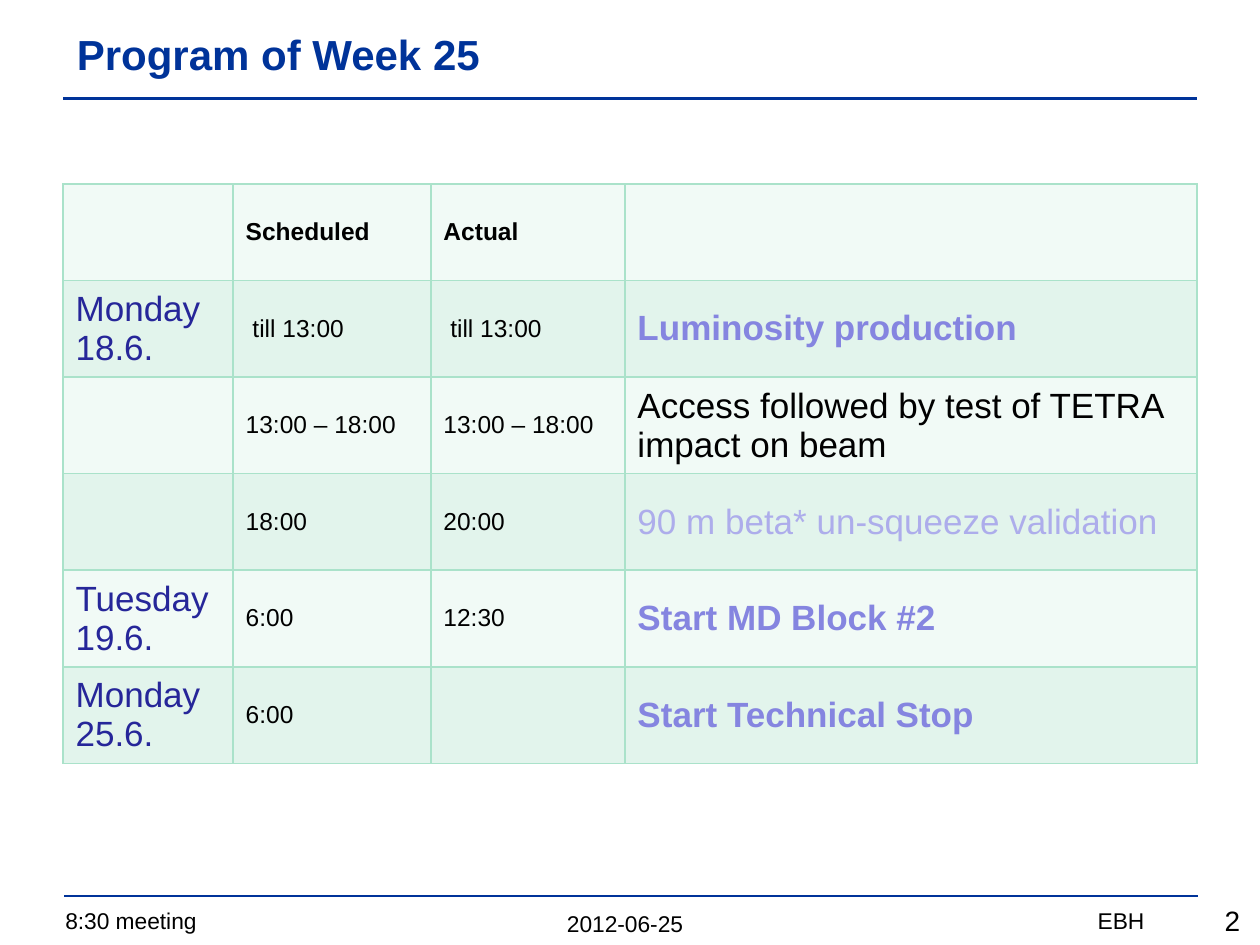
"""Builds the weekly program slide: title, schedule table and footer."""
from typing import NamedTuple

from lxml.etree import SubElement
from pptx import Presentation
from pptx.dml.color import RGBColor
from pptx.enum.shapes import MSO_CONNECTOR
from pptx.enum.text import MSO_ANCHOR, PP_ALIGN
from pptx.oxml.ns import qn
from pptx.util import Inches, Pt

BLACK = RGBColor(0x00, 0x00, 0x00)
NAVY = RGBColor(0x00, 0x33, 0x99)
INDIGO = RGBColor(0x26, 0x26, 0x99)
VIOLET = RGBColor(0x85, 0x85, 0xE0)
LILAC = RGBColor(0xAD, 0xAD, 0xEB)
MINT = RGBColor(0xAA, 0xE2, 0xCA)
BANDS = RGBColor(0xF1, 0xFA, 0xF6), RGBColor(0xE2, 0xF4, 0xEC)

UNIT = Inches(0.1)
COLS, ROWS = 100, 75
MARGIN = 5
TABLE_TOP, ROW_HEIGHT = 14.6, 7.65
COL_WIDTHS = 13.5, 15.7, 15.4, 45.4


class Entry(NamedTuple):
    day: str
    scheduled: str
    actual: str
    activity: str = ""
    color: RGBColor = BLACK
    bold: bool = False


class Footer(NamedTuple):
    text: str
    box: tuple
    align: PP_ALIGN
    size: int = 13


ENTRIES = [
    Entry("", "Scheduled", "Actual"),
    Entry("Monday 18.6.", " till 13:00", " till 13:00", "Luminosity production", VIOLET, True),
    Entry("", "13:00 – 18:00", "13:00 – 18:00", "Access followed by test of TETRA impact on beam"),
    Entry("", "18:00", "20:00", "90 m beta* un-squeeze validation", LILAC),
    Entry("Tuesday 19.6.", "6:00", "12:30", "Start MD Block #2", VIOLET, True),
    Entry("Monday 25.6.", "6:00", "", "Start Technical Stop", VIOLET, True),
]

FOOTERS = [
    Footer("2012-06-25", (24.2, 71.7, 50.8, 3.2), PP_ALIGN.CENTER),
    Footer("8:30 meeting", (4.2, 71.5, 37, 3.2), PP_ALIGN.LEFT),
    Footer("EBH", (62.6, 71.5, 29.2, 3.2), PP_ALIGN.RIGHT),
    Footer("2", (87.9, 71.2, 11.5, 3.7), PP_ALIGN.RIGHT, 16),
]


def grid(*cells: float) -> list:
    """Convert grid units to slide lengths."""
    return [round(c * UNIT) for c in cells]


def write(tf, text: str, *, size: int, color: RGBColor = BLACK,
          bold: bool = False, align: PP_ALIGN = PP_ALIGN.LEFT) -> None:
    """Fill a text frame with one formatted paragraph."""
    p = tf.paragraphs[0]
    p.alignment = align
    r = p.add_run()
    r.text = text
    r.font.name, r.font.size, r.font.bold = "Arial", Pt(size), bold
    r.font.color.rgb = color


def add_title(s, text: str) -> None:
    """Place and format the title placeholder."""
    sp = s.shapes.title
    sp.left, sp.top, sp.width, sp.height = grid(MARGIN + 0.1, 0.9, 89.9, 6.8)
    sp.text_frame.vertical_anchor = MSO_ANCHOR.MIDDLE
    write(sp.text_frame, text, size=24, color=NAVY, bold=True)


def add_rule(s, left: float, top: float) -> None:
    """Draw a horizontal rule between the margins."""
    line = s.shapes.add_connector(
        MSO_CONNECTOR.STRAIGHT, *grid(left, top, left + COLS - 2 * MARGIN, top))
    line.line.color.rgb, line.line.width = NAVY, Pt(1.5)
    SubElement(line._element.spPr, qn("a:effectLst"))


def add_footer(s, footer: Footer) -> None:
    """Add one footer text box."""
    tf = s.shapes.add_textbox(*grid(*footer.box)).text_frame
    tf.word_wrap = True
    write(tf, footer.text, size=footer.size, align=footer.align)


def style_cell(cell, band: RGBColor) -> None:
    """Set the borders, fill and anchor of a cell."""
    tcPr = cell._tc.get_or_add_tcPr()
    for side in ("lnL", "lnR", "lnT", "lnB"):
        ln = SubElement(tcPr, qn(f"a:{side}"), w=str(Pt(1)))
        fill = SubElement(ln, qn("a:solidFill"))
        SubElement(fill, qn("a:srgbClr"), val=str(MINT))
    cell.fill.solid()
    cell.fill.fore_color.rgb = band
    cell.vertical_anchor = MSO_ANCHOR.MIDDLE


def add_schedule(s, entries: list) -> None:
    """Add the schedule table with alternating row bands."""
    box = grid(MARGIN, TABLE_TOP, sum(COL_WIDTHS), ROW_HEIGHT * len(entries))
    table = s.shapes.add_table(len(entries), len(COL_WIDTHS), *box).table
    for col, width in zip(table.columns, grid(*COL_WIDTHS)):
        col.width = width
    for i, (row, e) in enumerate(zip(table.rows, entries)):
        time = {"size": 14, "bold": i == 0}
        formats = [
            (e.day, {"size": 20, "color": INDIGO}),
            (e.scheduled, time),
            (e.actual, time),
            (e.activity, {"size": 20, "color": e.color, "bold": e.bold}),
        ]
        for cell, (text, fmt) in zip(row.cells, formats):
            style_cell(cell, BANDS[i % 2])
            if text:
                write(cell.text_frame, text, **fmt)


def main() -> None:
    """Build and save the slide."""
    prs = Presentation()
    prs.slide_width, prs.slide_height = grid(COLS, ROWS)
    s = prs.slides.add_slide(prs.slide_layouts[5])
    for footer in FOOTERS:
        add_footer(s, footer)
    add_rule(s, MARGIN + 0.1, 71.1)
    add_rule(s, MARGIN, 7.8)
    add_schedule(s, ENTRIES)
    add_title(s, "Program of Week 25")
    prs.save("out.pptx")


if __name__ == "__main__":
    main()
